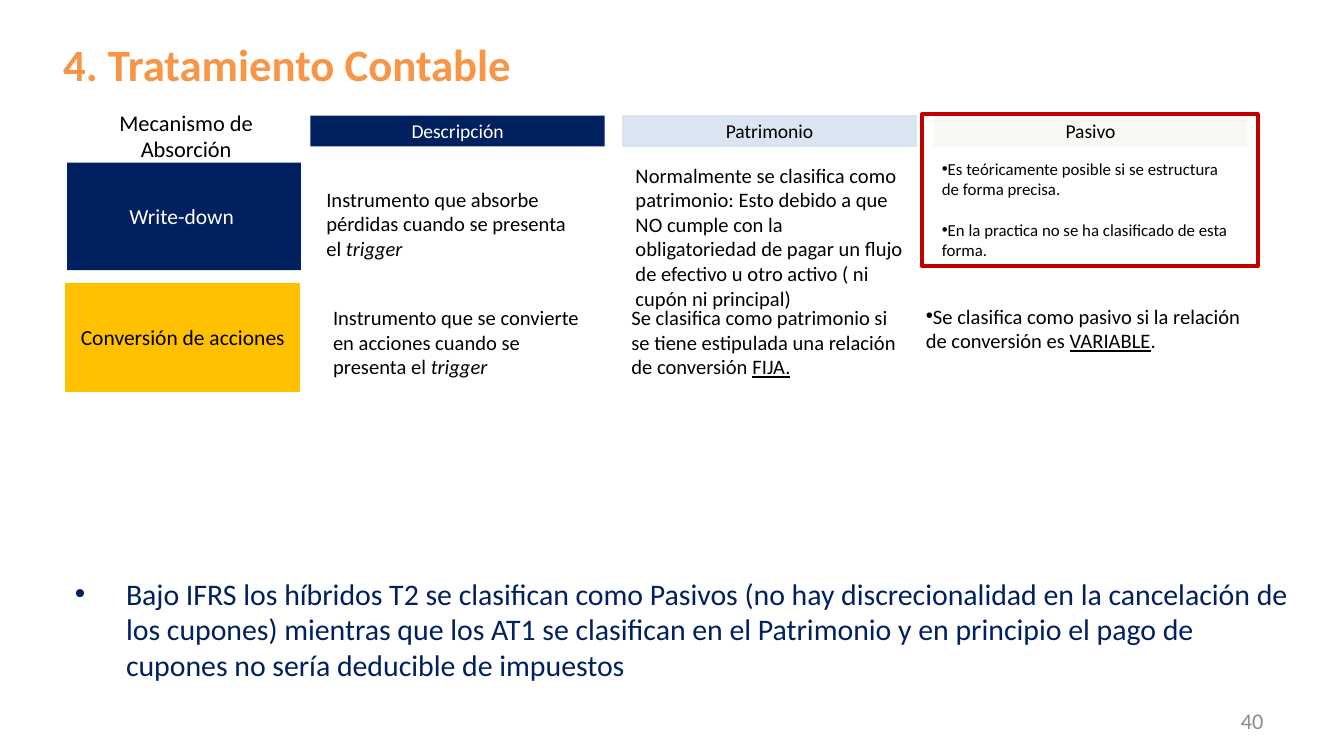
from lxml import etree
from pptx import Presentation
from pptx.dml.color import RGBColor
from pptx.enum.shapes import MSO_SHAPE
from pptx.enum.text import MSO_ANCHOR, MSO_AUTO_SIZE, PP_ALIGN
from pptx.oxml.ns import qn
from pptx.util import Inches, Pt

RECT = MSO_SHAPE.RECTANGLE
MIDDLE, BOTTOM = MSO_ANCHOR.MIDDLE, MSO_ANCHOR.BOTTOM
LEFT, CENTER, RIGHT = PP_ALIGN.LEFT, PP_ALIGN.CENTER, PP_ALIGN.RIGHT
GROW, FIXED = MSO_AUTO_SIZE.SHAPE_TO_FIT_TEXT, MSO_AUTO_SIZE.NONE

NAVY, BLACK, WHITE, ORANGE = "002060", "000000", "FFFFFF", "F79646"
GOLD, RED, GRAY = "FFC000", "C00000", "8C8C8C"

TITLE = "4. Tratamiento Contable"
CONCLUSION = (
    "Bajo IFRS los híbridos T2 se clasifican como Pasivos (no hay discrecionalidad "
    "en la cancelación de los cupones) mientras que los AT1 se clasifican en el "
    "Patrimonio y en principio el pago de cupones no sería deducible de impuestos"
)
LABELS = [
    ("Write-down ", (0.5, 1.21, 1.74, 0.8), 11.5, NAVY, None, WHITE),
    ("Conversión de acciones", (0.49, 2.11, 1.74, 0.8), 11.5, GOLD, GOLD, BLACK),
    ("Descripción", (2.31, 0.86, 2.19, 0.23), 10.5, NAVY, None, WHITE),
    ("Patrimonio", (4.63, 0.86, 2.19, 0.23), 10.5, "DBE5F1", "DBE5F1", BLACK),
    ("Pasivo", (6.95, 0.86, 2.33, 0.23), 10.5, "F8F7F3", "FCFBF9", BLACK),
]
CELLS = [
    ((2.33, 1.34, 2.1, 0.66), 11, False, [
        [("Instrumento que absorbe pérdidas cuando se presenta el ", ""), ("trigger", "i")]]),
    ((2.38, 2.22, 2.13, 0.66), 11, False, [
        [("Instrumento que se convierte en acciones cuando se presenta el ", ""),
         ("trigger", "i")]]),
    ((4.63, 1.16, 2.19, 1.21), 11, False, [
        [("Normalmente se clasifica como patrimonio: Esto debido a que NO cumple con la "
          "obligatoriedad de pagar un flujo de efectivo u otro activo ( ni cupón ni "
          "principal)", "")]]),
    ((4.6, 2.22, 2.27, 0.66), 11, False, [
        [("Se clasifica como patrimonio si se tiene estipulada una relación de conversión ",
          ""), ("FIJA.", "u")]]),
    ((6.91, 1.13, 2.38, 1.01), 9, True, [
        [("Es teóricamente posible si se estructura de forma precisa.", "")],
        [("En la practica no se ha clasificado de esta forma.", "")]]),
    ((6.79, 2.21, 2.71, 0.47), 11, True, [
        [("Se clasifica como pasivo si la relación de conversión es ", ""),
         ("VARIABLE", "u"), (".", "")]]),
]


def rgb(color):
    return RGBColor.from_string(color)


def style(r, size, color):
    r.font.name = "Calibri"
    r.font.size = Pt(size)
    r.font.color.rgb = rgb(color)


def add_bullet(p, indent=0):
    pPr = p._p.get_or_add_pPr()
    pPr.set("marL", str(Inches(indent)))
    pPr.set("indent", str(-Inches(indent)))
    etree.SubElement(pPr, qn("a:buFont")).set("typeface", "Arial")
    etree.SubElement(pPr, qn("a:buChar")).set("char", "•")


def add_rect(s, box, fill=None, line=None, width=0.75):
    sp = s.shapes.add_shape(RECT, *map(Inches, box))
    sp.shadow.inherit = False
    if fill:
        sp.fill.solid()
        sp.fill.fore_color.rgb = rgb(fill)
    else:
        sp.fill.background()
    if line:
        sp.line.color.rgb = rgb(line)
        sp.line.width = Pt(width)
    else:
        sp.line.fill.background()
    return sp


def add_text(s, box, text, size, color, align=LEFT, auto_size=FIXED):
    tf = s.shapes.add_textbox(*map(Inches, box)).text_frame
    tf.word_wrap = True
    tf.auto_size = auto_size
    tf.text = text
    p = tf.paragraphs[0]
    p.alignment = align
    for r in p.runs:
        style(r, size, color)
    return tf


prs = Presentation()
prs.slide_width = Inches(10)
prs.slide_height = prs.slide_width * 9 // 16
s = prs.slides.add_slide(prs.slide_layouts[5])

title = s.shapes.title
title.left, title.top, title.width, title.height = map(Inches, (0.3, 0, 9, 0.94))
tf = title.text_frame
tf.text = TITLE
tf.vertical_anchor = MIDDLE
tf.margin_left = Inches(0.17)
p = tf.paragraphs[0]
p.alignment = LEFT
style(p.runs[0], 24, ORANGE)
p.runs[0].font.bold = True

tf = add_text(s, (0.46, 0.81, 9.33, 4.45), CONCLUSION, 16, NAVY)
tf.vertical_anchor = BOTTOM
tf.margin_bottom = Inches(0.18)
add_bullet(tf.paragraphs[0], 0.38)

tf = add_text(s, (7.17, 5.21, 2.33, 0.3), "40", 12, GRAY, RIGHT)
tf.vertical_anchor = MIDDLE

for text, box, size, fill, line, color in LABELS:
    tf = add_rect(s, box, fill, line).text_frame
    tf.text = text
    tf.vertical_anchor = MIDDLE
    tf.margin_left = tf.margin_right = Inches(0.05)
    p = tf.paragraphs[0]
    p.alignment = CENTER
    style(p.runs[0], size, color)

for box, size, bulleted, paragraphs in CELLS:
    tf = add_text(s, box, "", size, BLACK, auto_size=GROW)
    for i, runs in enumerate(paragraphs):
        p = tf.add_paragraph() if i else tf.paragraphs[0]
        if i:
            p.space_before = Pt(11)
        if bulleted:
            add_bullet(p)
        for text, mark in runs:
            r = p.add_run()
            r.text = text
            style(r, size, BLACK)
            if mark == "i":
                r.font.italic = True
            elif mark == "u":
                r.font.underline = True

add_rect(s, (6.86, 0.85, 2.5, 1.13), line=RED, width=2)
add_text(s, (0.54, 0.76, 1.69, 0.5), "Mecanismo de Absorción", 12, BLACK, CENTER, GROW)

prs.save("out.pptx")
